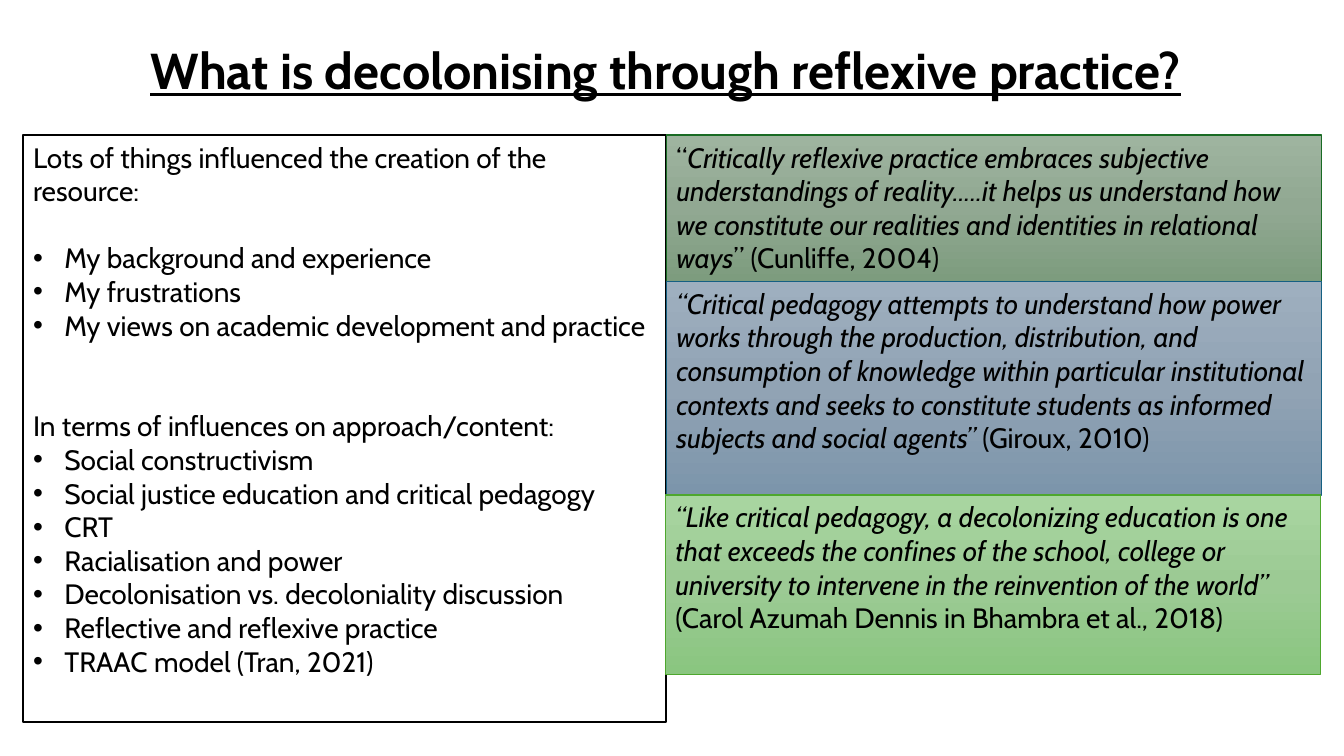
from copy import deepcopy

from lxml.etree import SubElement
from pptx import Presentation
from pptx.dml.color import RGBColor
from pptx.enum.shapes import MSO_SHAPE
from pptx.enum.text import MSO_ANCHOR, PP_ALIGN
from pptx.oxml.ns import qn
from pptx.util import Pt

PX = 9144  # EMU per px, 100 px to the inch
FONT = "Cabin"
LINE = 24  # height of one body line in points
COLORS = {
    "black": "000000",
    "white": "FFFFFF",
    "forest": "196B24",
    "teal": "156082",
    "leaf": "4EA72E",
}
SHADES = {
    "forest": ("9EB49F", "91A892", "7D9C7E"),
    "teal": ("9EAFBF", "91A3B4", "7C95AB"),
    "leaf": ("A8D5A0", "9CCA94", "8AC680"),
}
# Lead line, space before it in points, bullets, space before them
GROUPS = [
    ("Lots of things influenced the creation of the resource:", 0, [
        "My background and experience",
        "My frustrations",
        "My views on academic development and practice",
    ], LINE),
    ("In terms of influences on approach/content:", 2 * LINE, [
        "Social constructivism",
        "Social justice education and critical pedagogy",
        "CRT",
        "Racialisation and power",
        "Decolonisation vs. decoloniality discussion",
        "Reflective and reflexive practice",
        "TRAAC model (Tran, 2021)",
    ], 0),
]
# Left, height, colour, runs of (text, italic)
QUOTES = [
    (661, 145, "forest", [
        ("“", False),
        ("Critically reflexive practice embraces subjective understandings "
         "of reality.....it helps us understand how we constitute our "
         "realities and identities in relational ways", True),
        ("” (Cunliffe, 2004)", False),
    ]),
    (661, 212, "teal", [
        ("“Critical pedagogy attempts to understand how power works "
         "through the production, distribution, and consumption of "
         "knowledge within particular institutional contexts and seeks to "
         "constitute students as informed subjects and social agents” ",
         True),
        ("(Giroux, 2010)", False),
    ]),
    (660, 178, "leaf", [
        ("“Like critical pedagogy, a decolonizing education is one "
         "that exceeds the confines of the school, college or university "
         "to intervene in the reinvention of the world” ", True),
        ("(Carol Azumah Dennis in Bhambra et al., 2018)", False),
    ]),
]


def color(name):
    return RGBColor.from_string(COLORS[name])


def add_run(para, text, size=20, italic=False):
    run = para.add_run()
    run.text = text
    font = run.font
    font.name, font.size, font.italic = FONT, Pt(size), italic
    font.color.rgb = color("black")
    return run


def add_box(slide, box, line, width):
    """Add a lined rectangle with text at its top left."""
    shape = slide.shapes.add_shape(MSO_SHAPE.RECTANGLE, *[n * PX for n in box])
    shape.shadow.inherit = False
    shape.line.color.rgb = color(line)
    shape.line.width = Pt(width)
    frame = shape.text_frame
    frame.word_wrap = True
    frame.vertical_anchor = MSO_ANCHOR.TOP
    frame.paragraphs[0].alignment = PP_ALIGN.LEFT
    return shape


def shade(shape, tones):
    """Fill from top to bottom with three evenly spaced tones."""
    fill = shape.fill
    fill.gradient()
    fill.gradient_angle = 270
    stops = shape.element.spPr.find(".//" + qn("a:gsLst"))
    stops.insert(1, deepcopy(stops[0]))
    for i, (stop, tone) in enumerate(zip(fill.gradient_stops, tones)):
        stop.position = i / 2
        stop.color.rgb = RGBColor.from_string(tone)


def add_bullet(para):
    props = para._p.get_or_add_pPr()
    props.set("marL", str(31 * PX))
    props.set("indent", str(-31 * PX))
    SubElement(props, qn("a:buFont")).set("typeface", "Arial")
    SubElement(props, qn("a:buChar")).set("char", "•")


def add_title(slide, box, text):
    frame = slide.shapes.add_textbox(*[n * PX for n in box]).text_frame
    frame.word_wrap = True
    para = frame.paragraphs[0]
    para.alignment = PP_ALIGN.CENTER
    font = add_run(para, text, 36).font
    font.bold = font.underline = True


def add_list(slide, box):
    shape = add_box(slide, box, "black", 1.5)
    shape.fill.solid()
    shape.fill.fore_color.rgb = color("white")
    frame = shape.text_frame
    para = frame.paragraphs[0]
    for lead, before, items, gap in GROUPS:
        if before:
            para = frame.add_paragraph()
            para.space_before = Pt(before)
        para.alignment = PP_ALIGN.LEFT
        add_run(para, lead)
        for i, item in enumerate(items):
            para = frame.add_paragraph()
            para.alignment = PP_ALIGN.LEFT
            if gap and i == 0:
                para.space_before = Pt(gap)
            add_bullet(para)
            add_run(para, item)


def add_quotes(slide, top, width):
    """Stack the quotes downwards from top."""
    for left, height, name, runs in QUOTES:
        shape = add_box(slide, (left, top, width, height), name, 1)
        shade(shape, SHADES[name])
        for text, italic in runs:
            add_run(shape.text_frame.paragraphs[0], text, italic=italic)
        top += height


def main():
    deck = Presentation()
    deck.slide_width, deck.slide_height = 1333 * PX, 750 * PX
    slide = deck.slides.add_slide(deck.slide_layouts[6])
    add_list(slide, (23, 134, 638, 582))
    add_quotes(slide, 134, 650)
    add_title(slide, (101, 34, 1119, 71),
              "What is decolonising through reflexive practice?")
    deck.save("out.pptx")


if __name__ == "__main__":
    main()
